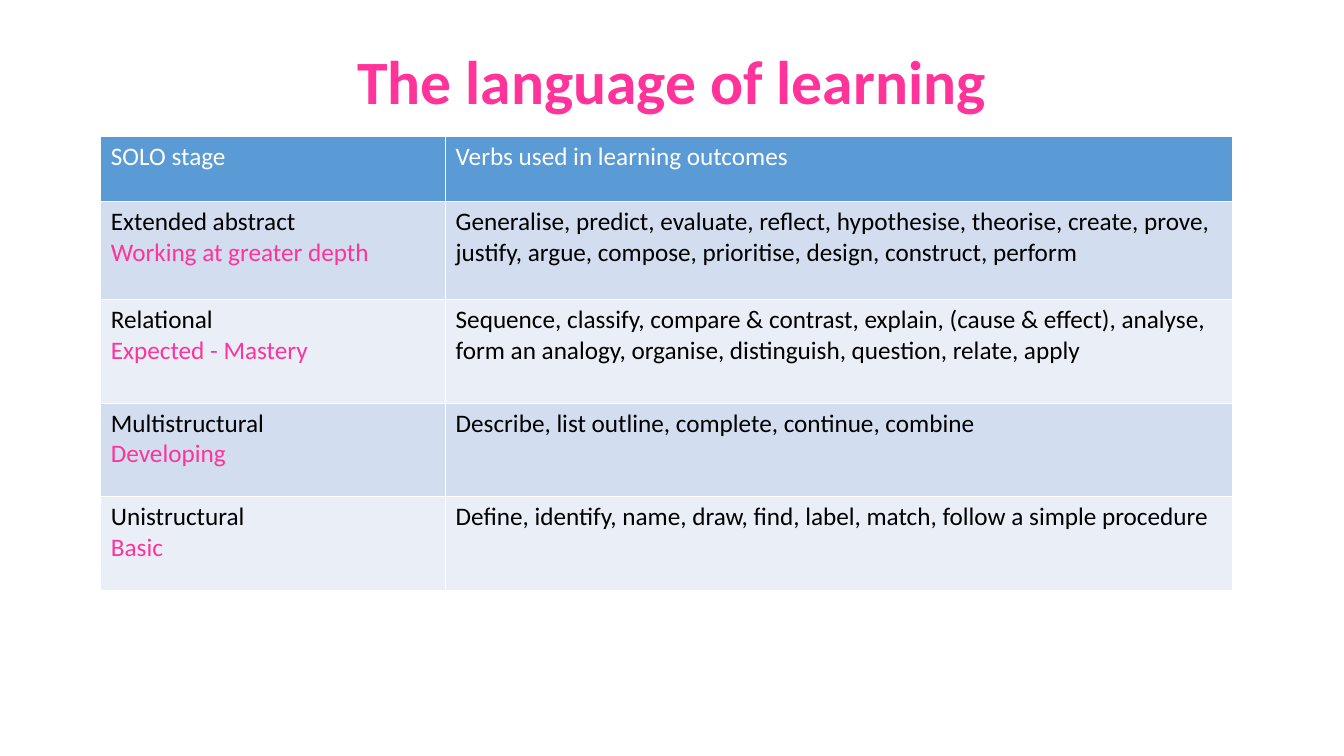
from dataclasses import dataclass

from pptx import Presentation
from pptx.dml.color import RGBColor
from pptx.enum.text import MSO_ANCHOR, PP_ALIGN
from pptx.util import Inches, Pt

CENTER = PP_ALIGN.CENTER
MIDDLE = MSO_ANCHOR.MIDDLE

FONT = "Calibri"
COLOURS = {
    "pink": "FF3399",
    "header": "5B9BD5",
    "odd": "D2DEEF",
    "even": "EAEFF7",
    "white": "FFFFFF",
    "black": "000000",
}
TITLE_ONLY = 5
COLUMN_WIDTHS = (3.42, 7.81)


@dataclass
class Stage:
    name: str
    level: str
    verbs: str
    height: float


STAGES = [
    Stage("Extended abstract", "Working at greater depth",
          "Generalise, predict, evaluate, reflect, hypothesise, theorise, create, prove, "
          "justify, argue, compose, prioritise, design, construct, perform", 0.97),
    Stage("Relational", "Expected - Mastery",
          "Sequence, classify, compare & contrast, explain, (cause & effect), analyse, "
          "form an analogy, organise, distinguish, question, relate, apply", 1.03),
    Stage("Multistructural", "Developing",
          "Describe, list outline, complete, continue, combine", 0.93),
    Stage("Unistructural", "Basic",
          "Define, identify, name, draw, find, label, match, follow a simple procedure", 0.93),
]
HEADER_HEIGHT = 0.65


def colour(name: str) -> RGBColor:
    return RGBColor.from_string(COLOURS[name])


def write(para, text: str, *, ink: str = "black", size: int = 18, bold: bool = False) -> None:
    span = para.add_run()
    span.text = text
    span.font.name = FONT
    span.font.size = Pt(size)
    span.font.bold = bold
    span.font.color.rgb = colour(ink)


def fill_cell(cell, lines: list[tuple[str, str]], fill: str) -> None:
    """Write (text, ink) lines, one paragraph each, on a plain fill."""
    cell.fill.solid()
    cell.fill.fore_color.rgb = colour(fill)
    frame = cell.text_frame
    for index, (text, ink) in enumerate(lines):
        para = frame.add_paragraph() if index else frame.paragraphs[0]
        write(para, text, ink=ink)


def add_title(page, text: str) -> None:
    box = page.shapes.title
    box.left, box.top = Inches(1), Inches(0.21)
    box.width, box.height = Inches(11.33), Inches(1.25)
    box.text_frame.vertical_anchor = MIDDLE
    para = box.text_frame.paragraphs[0]
    para.alignment = CENTER
    para.line_spacing = 0.9
    write(para, text, ink="pink", size=44, bold=True)


def add_stage_table(page) -> None:
    heights = [HEADER_HEIGHT] + [stage.height for stage in STAGES]
    table = page.shapes.add_table(
        len(heights), len(COLUMN_WIDTHS), Inches(1), Inches(1.35),
        Inches(sum(COLUMN_WIDTHS)), Inches(sum(heights))).table
    for column, width in zip(table.columns, COLUMN_WIDTHS):
        column.width = Inches(width)
    for row, height in zip(table.rows, heights):
        row.height = Inches(height)

    # Header row
    for index, heading in enumerate(("SOLO stage", "Verbs used in learning outcomes")):
        fill_cell(table.cell(0, index), [(heading, "white")], "header")

    # One banded row per stage
    for number, stage in enumerate(STAGES, start=1):
        band = "odd" if number % 2 else "even"
        fill_cell(table.cell(number, 0), [(stage.name, "black"), (stage.level, "pink")], band)
        fill_cell(table.cell(number, 1), [(stage.verbs, "black")], band)


def main() -> None:
    deck = Presentation()
    deck.slide_width, deck.slide_height = Inches(13.33), Inches(7.5)
    page = deck.slides.add_slide(deck.slide_layouts[TITLE_ONLY])
    add_title(page, "The language of learning")
    add_stage_table(page)
    deck.save("out.pptx")


if __name__ == "__main__":
    main()
